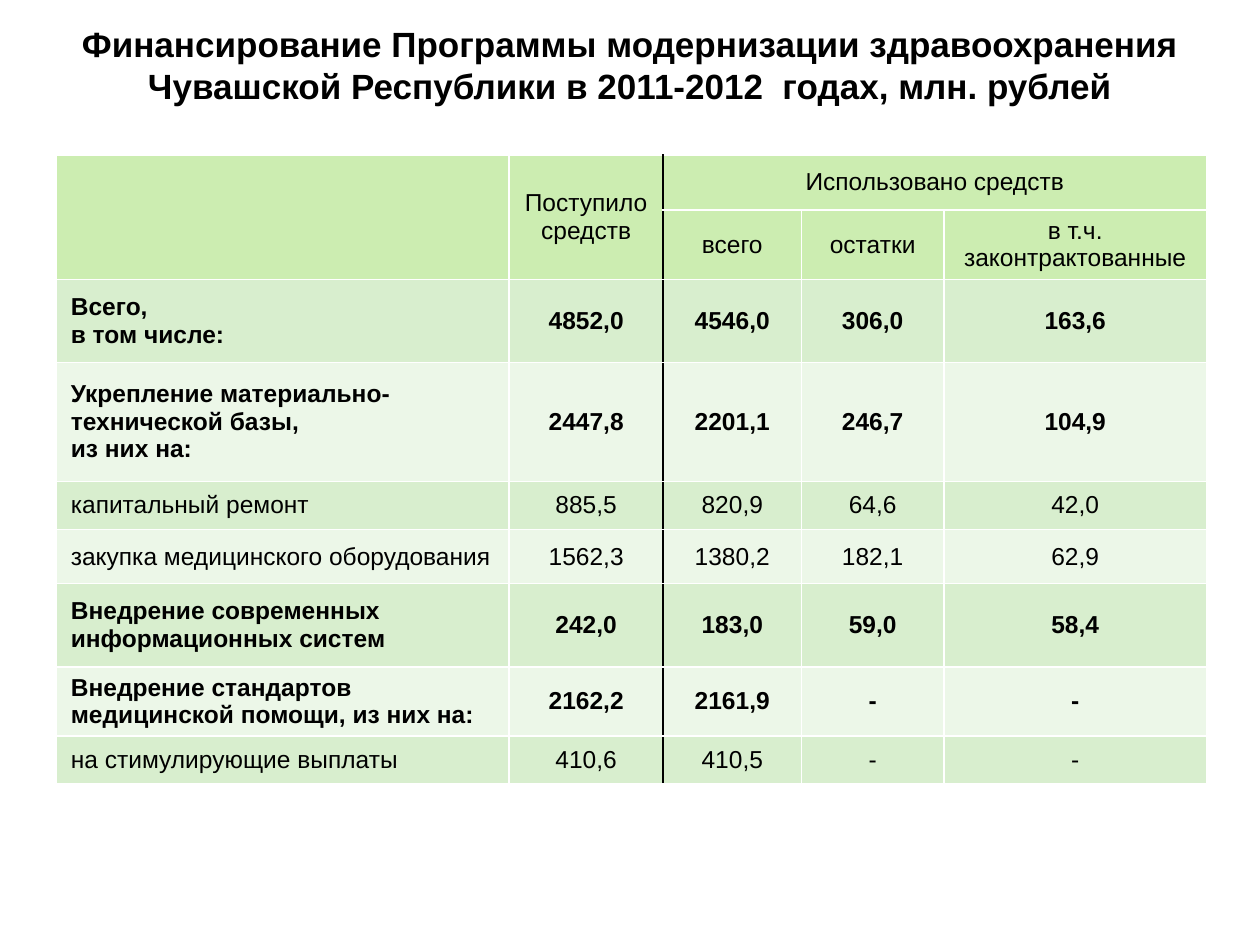
from pptx import Presentation
from pptx.dml.color import RGBColor
from pptx.enum.text import MSO_ANCHOR as Anchor, PP_ALIGN as Align
from pptx.oxml.ns import qn
from pptx.util import Pt
from lxml.etree import SubElement

COLORS = {
    "text": "000000",
    "grid": "FFFFFF",
    "divider": "000000",
    "header": "CCEDB1",
    "dark": "D8EECE",
    "light": "ECF7E8",
}
TITLE = ("Финансирование Программы модернизации здравоохранения "
         "Чувашской Республики в 2011-2012  годах, млн. рублей")
HEADER = [
    ["", "Поступило средств", "Использовано средств", "", ""],
    ["", "", "всего", "остатки", "в т.ч. законтрактованные"],
]
BODY = [
    (True, ["Всего,\vв том числе:", "4852,0", "4546,0", "306,0", "163,6"]),
    (True, ["Укрепление материально-технической базы,\vиз них на:",
            "2447,8", "2201,1", "246,7", "104,9"]),
    (False, ["капитальный ремонт", "885,5", "820,9", "64,6", "42,0"]),
    (False, ["закупка медицинского оборудования",
             "1562,3", "1380,2", "182,1", "62,9"]),
    (True, ["Внедрение современных информационных систем",
            "242,0", "183,0", "59,0", "58,4"]),
    (True, ["Внедрение стандартов медицинской помощи, из них на:",
            "2162,2", "2161,9", "-", "-"]),
    (False, ["на стимулирующие выплаты", "410,6", "410,5", "-", "-"]),
]
COL_WIDTHS = [259, 88, 79, 81.5, 150]
ROW_HEIGHTS = [31.5, 39, 47.5, 68, 27.5, 31, 47.5, 39, 27.5]
MERGES = [((0, 0), (1, 0)), ((0, 1), (1, 1)), ((0, 2), (0, 4))]
DIVIDERS = {(1, "R"), (2, "L")}


class Deck:
    font = "Arial"
    inset = 3

    def __init__(self, prs):
        self.s = prs.slides.add_slide(prs.slide_layouts[6])

    def text(self, tf, text, size, bold, align):
        tf.text = text.replace("\v", "\v")
        tf.word_wrap = True
        p = tf.paragraphs[0]
        p.alignment = align
        for font in [p.font] + [r.font for r in p.runs]:
            font.name, font.size, font.bold = self.font, Pt(size), bold
            font.color.rgb = RGBColor.from_string(COLORS["text"])

    def title(self, text, x, y, w, h):
        sp = self.s.shapes.add_textbox(Pt(x), Pt(y), Pt(w), Pt(h))
        tf = sp.text_frame
        tf.margin_left = tf.margin_right = Pt(self.inset)
        tf.vertical_anchor = Anchor.TOP
        self.text(tf, text, 20, True, Align.CENTER)

    def border(self, cell, side, color):
        tcPr = cell._tc.get_or_add_tcPr()
        ln = SubElement(tcPr, qn(f"a:ln{side}"), w=str(Pt(1)))
        fill = SubElement(ln, qn("a:solidFill"))
        SubElement(fill, qn("a:srgbClr"), val=COLORS[color])

    def cell(self, cell, text, col, fill, bold):
        for side in "LRTB":
            divided = (col, side) in DIVIDERS
            self.border(cell, side, "divider" if divided else "grid")
        cell.fill.solid()
        cell.fill.fore_color.rgb = RGBColor.from_string(COLORS[fill])
        cell.vertical_anchor = Anchor.MIDDLE
        cell.margin_left = Pt(self.inset if col else 8.5)
        cell.margin_right = cell.margin_top = cell.margin_bottom = Pt(self.inset)
        align = Align.CENTER if col else Align.LEFT
        self.text(cell.text_frame, text, 14, bold, align)

    def table(self, rows, x, y):
        frame = self.s.shapes.add_table(
            len(rows), len(COL_WIDTHS), Pt(x), Pt(y),
            Pt(sum(COL_WIDTHS)), Pt(sum(ROW_HEIGHTS)))
        table = frame.table
        table.first_row = table.horz_banding = False
        for col, width in zip(table.columns, COL_WIDTHS):
            col.width = Pt(width)
        for row, height in zip(table.rows, ROW_HEIGHTS):
            row.height = Pt(height)
        for i, (fill, bold, texts) in enumerate(rows):
            for j, text in enumerate(texts):
                self.cell(table.cell(i, j), text, j, fill, bold)
        for first, last in MERGES:
            table.cell(*first).merge(table.cell(*last))


def main():
    prs = Presentation()
    prs.slide_width, prs.slide_height = Pt(720), Pt(540)
    deck = Deck(prs)
    deck.title(TITLE, 14, 9.5, 692, 44.5)
    rows = [("header", False, texts) for texts in HEADER]
    rows += [("light" if i % 2 else "dark", bold, texts)
             for i, (bold, texts) in enumerate(BODY)]
    deck.table(rows, 32, 88.5)
    prs.save("out.pptx")


if __name__ == "__main__":
    main()
